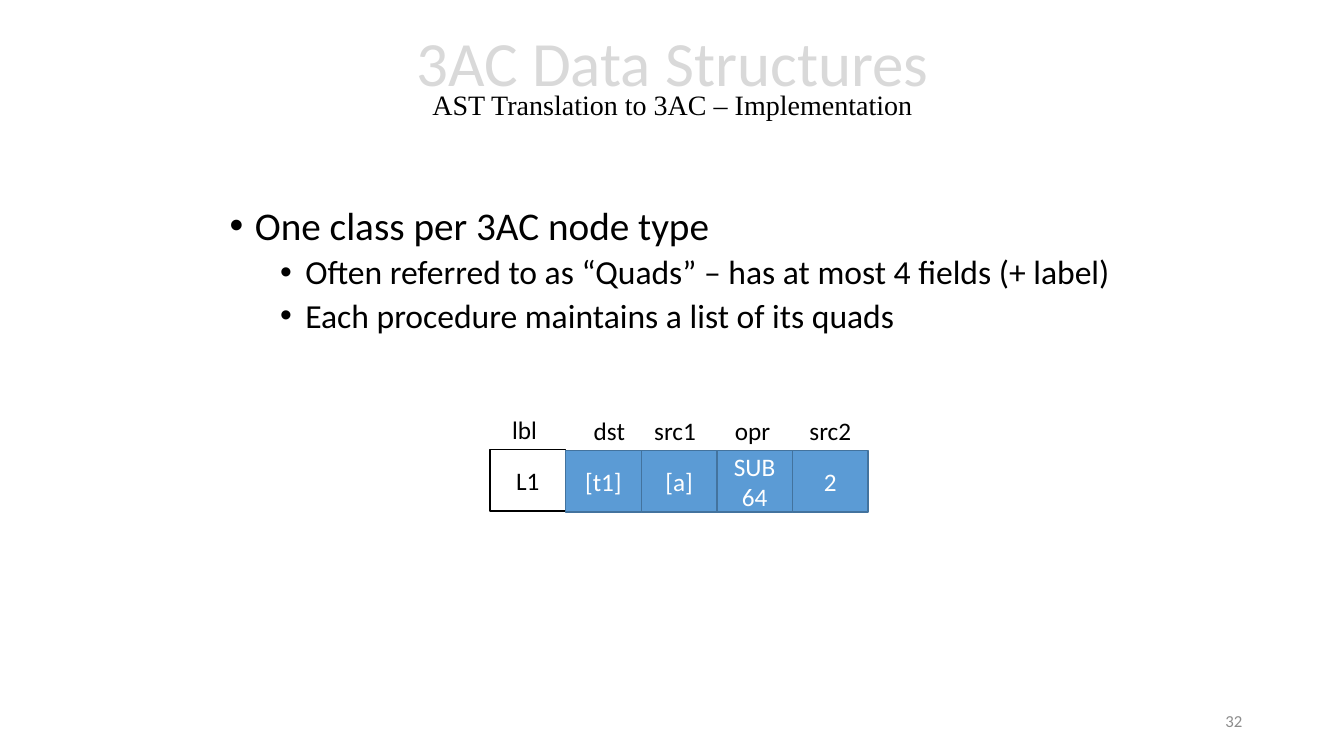
from dataclasses import dataclass

from lxml import etree
from pptx import Presentation
from pptx import util as u
from pptx.dml.color import RGBColor
from pptx.enum import shapes, text
from pptx.oxml import ns

HUES = {
    "ink": "000000",
    "pale": "D9D9D9",
    "gray": "8C8C8C",
    "white": "FFFFFF",
    "blue": "5B9BD5",
    "edge": "43739E",
}
ALIGN = text.PP_ALIGN
MID = text.MSO_ANCHOR.MIDDLE


@dataclass
class Field:
    name: str
    value: str
    left: float
    width: float
    top: float = 4.07
    fill: str = "blue"
    edge: str = "edge"
    ink: str = "white"


@dataclass
class Point:
    words: str
    size: int
    level: int
    indent: float
    before: int


FIELDS = [
    Field("lbl", "L1", 4.98, 0.45, 4.06, "white", "ink", "ink"),
    Field("dst", "[t1]", 5.79, 0.51),
    Field("src1", "[a]", 6.39, 0.62),
    Field("opr", "SUB\n64", 7.19, 0.56),
    Field("src2", "2", 7.93, 0.62),
]
POINTS = [
    Point("One class per 3AC node type", 28, 0, 0.25, 10),
    Point("Often referred to as “Quads” – has at most 4 fields (+ label)", 24, 1, 0.75, 5),
    Point("Each procedure maintains a list of its quads", 24, 1, 0.75, 5),
]


def color(hue: str) -> RGBColor:
    return RGBColor.from_string(HUES[hue])


def write(para, words: str, size: int = 18, hue: str = "ink",
          font: str = "Calibri", align=ALIGN.LEFT) -> None:
    para.alignment = align
    run = para.add_run()
    run.text = words
    run.font.size = u.Pt(size)
    run.font.name = font
    run.font.color.rgb = color(hue)


def add_box(slide, left: float, top: float, width: float, height: float, wrap: bool = True):
    box = slide.shapes.add_textbox(*map(u.Inches, (left, top, width, height)))
    box.text_frame.word_wrap = wrap
    return box.text_frame


def add_title(slide) -> None:
    title = slide.shapes.title
    title.left, title.top = u.Inches(1.67), u.Inches(0.09)
    title.width, title.height = u.Inches(10), u.Inches(1.45)
    frame = title.text_frame
    frame.auto_size = text.MSO_AUTO_SIZE.NONE
    frame.vertical_anchor = MID
    para = frame.paragraphs[0]
    para.line_spacing = 0.7
    write(para, "3AC Data Structures", 45, "pale", align=ALIGN.CENTER)
    para.add_line_break()
    write(para, "AST Translation to 3AC – Implementation", 20,
          font="Times New Roman", align=ALIGN.CENTER)


def add_points(slide) -> None:
    frame = add_box(slide, 2.18, 2, 9.1, 2)
    for i, point in enumerate(POINTS):
        para = frame.add_paragraph() if i else frame.paragraphs[0]
        para.level = point.level
        para.line_spacing = 0.9
        para.space_before = u.Pt(point.before)
        write(para, point.words, point.size)
        props = para._p.get_or_add_pPr()
        props.set("marL", str(u.Inches(point.indent)))
        props.set("indent", str(u.Inches(-0.25)))
        etree.SubElement(props, ns.qn("a:buFont")).set("typeface", "Arial")
        etree.SubElement(props, ns.qn("a:buChar")).set("char", "•")


def add_field(slide, field: Field, left: float) -> None:
    cell = slide.shapes.add_shape(
        shapes.MSO_SHAPE.RECTANGLE,
        *map(u.Inches, (left, field.top + 0.4, 0.75, 0.61)))
    cell.shadow.inherit = False
    cell.fill.solid()
    cell.fill.fore_color.rgb = color(field.fill)
    cell.line.color.rgb = color(field.edge)
    cell.line.width = u.Pt(1)
    frame = cell.text_frame
    frame.vertical_anchor = MID
    for i, words in enumerate(field.value.split("\n")):
        para = frame.add_paragraph() if i else frame.paragraphs[0]
        write(para, words, hue=field.ink, align=ALIGN.CENTER)
    label = add_box(slide, field.left, field.top, field.width, 0.4, wrap=False)
    write(label.paragraphs[0], field.name)


def main() -> None:
    deck = Presentation()
    deck.slide_width, deck.slide_height = u.Inches(13.33), u.Inches(7.5)
    slide = deck.slides.add_slide(deck.slide_layouts[5])
    add_title(slide)
    add_points(slide)
    for i, field in enumerate(FIELDS):
        add_field(slide, field, 4.86 + 0.75 * i)
    page = add_box(slide, 9.42, 6.95, 3, 0.4)
    page.vertical_anchor = MID
    write(page.paragraphs[0], "32", 12, "gray", align=ALIGN.RIGHT)
    deck.save("out.pptx")


if __name__ == "__main__":
    main()
